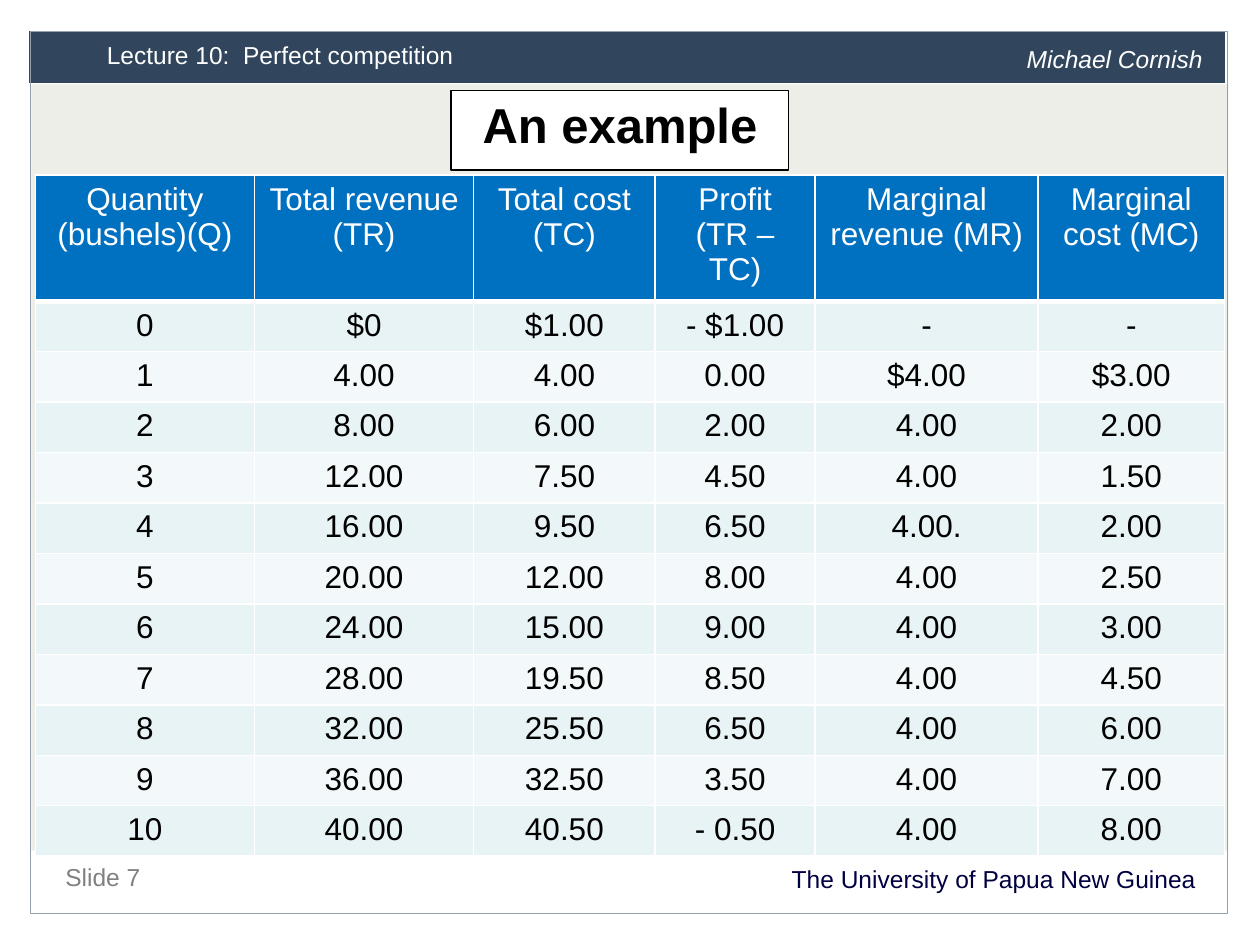
import pptx
import pptx.util
import pptx.dml.color
import pptx.enum.shapes
import pptx.enum.text
from lxml import etree
from pptx.util import Inches, Pt

ALIGN = pptx.enum.text.PP_ALIGN
ANCHOR = pptx.enum.text.MSO_ANCHOR
NAMESPACE = "http://schemas.openxmlformats.org/drawingml/2006/main"

WHITE, BLACK = "FFFFFF", "000000"
HEADER_FILL = "0070C0"
BAND_FILLS = ("E7F3F4", "F3F9FA")

COLUMN_WIDTHS = (1.74, 1.74, 1.44, 1.27, 1.77, 1.48)
HEADER_HEIGHT, ROW_HEIGHT = 1.0, 0.4
HEADINGS = ("Quantity (bushels)(Q)", "Total revenue (TR)", "Total cost (TC)",
            "Profit (TR – TC)", "Marginal revenue (MR)", "Marginal cost (MC)")
FIGURES = (
    ("0", "$0", "$1.00", "- $1.00", "-", "-"),
    ("1", "4.00", "4.00", "0.00", "$4.00", "$3.00"),
    ("2", "8.00", "6.00", "2.00", "4.00", "2.00"),
    ("3", "12.00", "7.50", "4.50", "4.00", "1.50"),
    ("4", "16.00", "9.50", "6.50", "4.00.", "2.00"),
    ("5", "20.00", "12.00", "8.00", "4.00", "2.50"),
    ("6", "24.00", "15.00", "9.00", "4.00", "3.00"),
    ("7", "28.00", "19.50", "8.50", "4.00", "4.50"),
    ("8", "32.00", "25.50", "6.50", "4.00", "6.00"),
    ("9", "36.00", "32.50", "3.50", "4.00", "7.00"),
    ("10", "40.00", "40.50", "- 0.50", "4.00", "8.00"),
)


def rgb(color):
    return pptx.dml.color.RGBColor.from_string(color)


def write(frame, text, size, color, align=ALIGN.LEFT, line_pt=None,
          bold=False, italic=False):
    paragraph = frame.paragraphs[0]
    paragraph.alignment = align
    if line_pt:
        paragraph.line_spacing = Pt(line_pt)
    run = paragraph.add_run()
    run.text = text
    run.font.name = "Arial"
    run.font.size = Pt(size)
    run.font.bold = bold
    run.font.italic = italic
    run.font.color.rgb = rgb(color)


def add_panel(slide, left, top, width, height, fill=None, line=None, line_pt=0.75):
    panel = slide.shapes.add_shape(
        pptx.enum.shapes.MSO_SHAPE.RECTANGLE,
        Inches(left), Inches(top), Inches(width), Inches(height))
    panel.shadow.inherit = False
    if fill:
        panel.fill.solid()
        panel.fill.fore_color.rgb = rgb(fill)
    else:
        panel.fill.background()
    if line:
        panel.line.color.rgb = rgb(line)
        panel.line.width = Pt(line_pt)
    else:
        panel.line.fill.background()
    return panel


def add_label(slide, left, top, width, height, text, color, **style):
    label = slide.shapes.add_textbox(
        Inches(left), Inches(top), Inches(width), Inches(height))
    label.text_frame.word_wrap = True
    write(label.text_frame, text, 14, color, **style)


def add_frame(slide, left, top, width, height):
    """Backdrop, top band and outline around the whole page."""
    add_panel(slide, left + 0.01, top + 0.42, width, 6.08, fill="EDEEE8")
    add_panel(slide, left - 0.01, top - 0.01, width, 0.42, "31465C", WHITE, 0.5)
    add_panel(slide, left, top, width, height, line="91A1B0")


def add_header(slide, left, top):
    add_label(slide, left, top, 6.13, 0.37, "Lecture 10:  Perfect competition",
              WHITE, line_pt=18)
    add_label(slide, left + 7.3, top + 0.03, 1.64, 0.37, "Michael Cornish",
              WHITE, line_pt=18, italic=True)


def add_footer(slide, left, top):
    add_label(slide, left, top + 0.08, 9.17, 0.32, "The University of Papua New Guinea",
              "000041", align=ALIGN.RIGHT, line_pt=15)
    add_label(slide, left, top, 4.33, 0.34, "Slide 7", "808080", line_pt=20)


def add_title(slide, left, top, width, height):
    title = add_panel(slide, left, top, width, height, WHITE, BLACK)
    title.text_frame.word_wrap = True
    title.text_frame.vertical_anchor = ANCHOR.MIDDLE
    write(title.text_frame, "An example", 28, BLACK, ALIGN.CENTER, 26, bold=True)


def set_borders(cell, bottom_pt):
    properties = cell._tc.get_or_add_tcPr()
    widths = {"lnL": 1, "lnR": 1, "lnT": 1, "lnB": bottom_pt}
    for position, (side, width) in enumerate(widths.items()):
        border = etree.Element(f"{{{NAMESPACE}}}{side}", w=str(Pt(width)))
        fill = etree.SubElement(border, f"{{{NAMESPACE}}}solidFill")
        etree.SubElement(fill, f"{{{NAMESPACE}}}srgbClr", val=WHITE)
        properties.insert(position, border)


def fill_cell(cell, text, fill, color, bottom_pt=1):
    cell.margin_left = cell.margin_right = Inches(0.11)
    cell.margin_top = cell.margin_bottom = Inches(0.05)
    cell.fill.solid()
    cell.fill.fore_color.rgb = rgb(fill)
    set_borders(cell, bottom_pt)
    write(cell.text_frame, text, 18, color, ALIGN.CENTER)


def add_cost_table(slide, left, top):
    height = HEADER_HEIGHT + ROW_HEIGHT * len(FIGURES)
    table = slide.shapes.add_table(
        len(FIGURES) + 1, len(HEADINGS), Inches(left), Inches(top),
        Inches(sum(COLUMN_WIDTHS)), Inches(height)).table
    for column, width in zip(table.columns, COLUMN_WIDTHS):
        column.width = Inches(width)
    for row in table.rows:
        row.height = Inches(ROW_HEIGHT)
    table.rows[0].height = Inches(HEADER_HEIGHT)

    for column, heading in enumerate(HEADINGS):
        fill_cell(table.cell(0, column), heading, HEADER_FILL, WHITE, bottom_pt=3)
    for row, figures in enumerate(FIGURES):
        for column, figure in enumerate(figures):
            fill_cell(table.cell(row + 1, column), figure, BAND_FILLS[row % 2], BLACK)


def main():
    presentation = pptx.Presentation()
    presentation.slide_width = Inches(10)
    presentation.slide_height = Inches(7.5)
    slide = presentation.slides.add_slide(presentation.slide_layouts[6])
    add_frame(slide, 0.24, 0.25, 9.5, 7)
    add_header(slide, 0.75, 0.25)
    add_footer(slide, 0.42, 6.75)
    add_cost_table(slide, 0.28, 1.39)
    add_title(slide, 3.58, 0.72, 2.68, 0.63)
    presentation.save("out.pptx")


if __name__ == "__main__":
    main()
